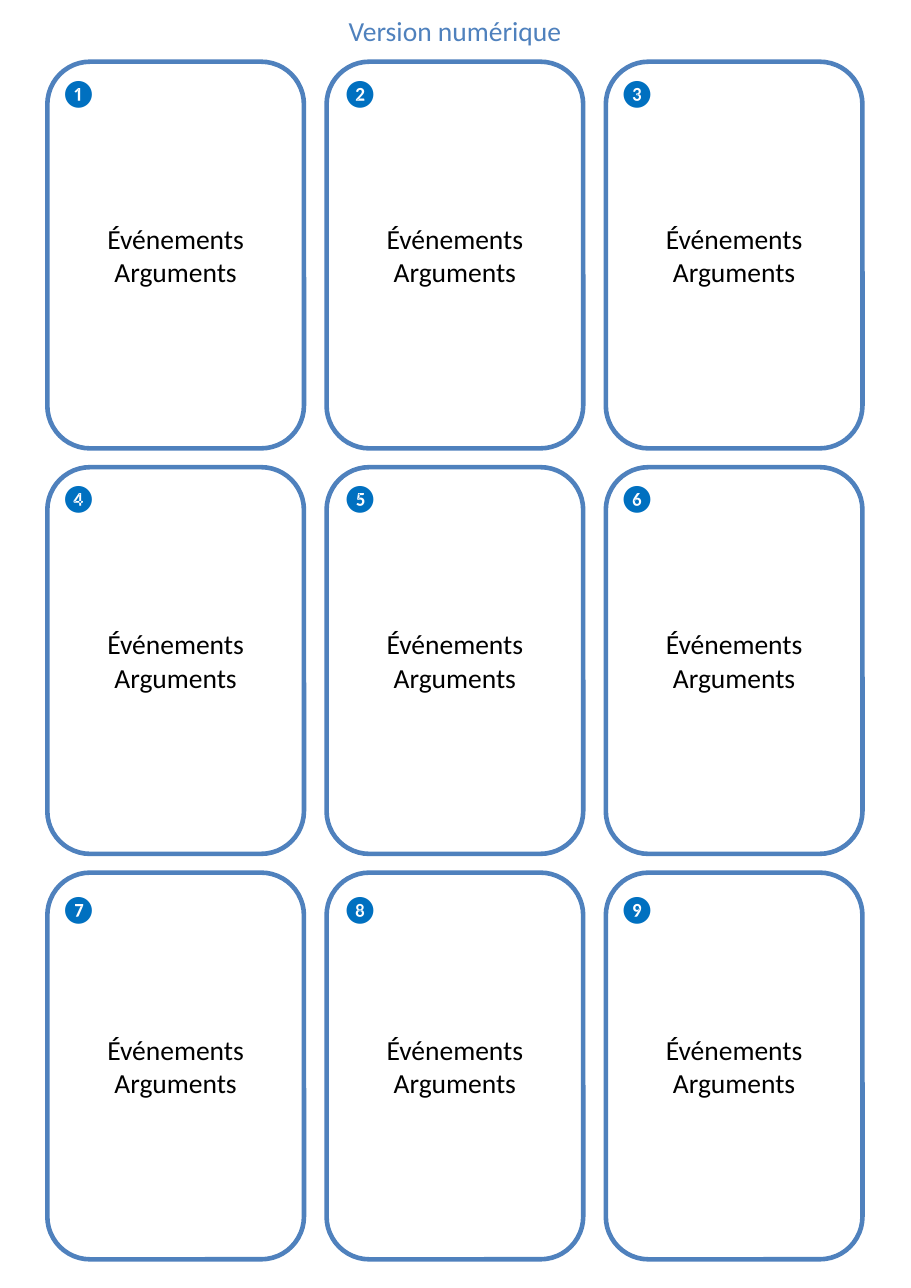
import pptx
import pptx.dml.color
import pptx.enum.shapes
import pptx.enum.text
import pptx.util

Inches = pptx.util.Inches
ALIGN = pptx.enum.text.PP_ALIGN
ANCHOR = pptx.enum.text.MSO_ANCHOR
AUTO_SIZE = pptx.enum.text.MSO_AUTO_SIZE

CARD_BLUE = "4F81BD"
NUMBER_BLUE = "0070C0"
NUMBERS = "❶❷❸❹❺❻❼❽❾"
COLUMNS = 3
CARD_WIDTH, CARD_HEIGHT = 2.33, 3.51
COLUMN_STEP, ROW_STEP = 2.535, 3.68
# Distance of the numbers from the card corner, by column and by row
NUMBER_INSETS_X = [0.02, 0.04, 0.02]
NUMBER_INSETS_Y = [0.08, 0.08, 0.13]


def color(hex_code):
    return pptx.dml.color.RGBColor.from_string(hex_code)


def write(frame, text, hex_code, align):
    frame.text = text
    for paragraph in frame.paragraphs:
        paragraph.alignment = align
        for run in paragraph.runs:
            run.font.name = "Calibri"
            run.font.size = pptx.util.Pt(18)
            run.font.color.rgb = color(hex_code)


def add_title(slide, left, top, width, height):
    title = slide.shapes.title
    title.left, title.top = Inches(left), Inches(top)
    title.width, title.height = Inches(width), Inches(height)
    frame = title.text_frame
    frame.vertical_anchor = ANCHOR.TOP
    frame.auto_size = AUTO_SIZE.NONE
    write(frame, "Version numérique", CARD_BLUE, ALIGN.CENTER)


def add_card(shapes, left, top):
    card = shapes.add_shape(
        pptx.enum.shapes.MSO_SHAPE.FLOWCHART_ALTERNATE_PROCESS,
        Inches(left), Inches(top), Inches(CARD_WIDTH), Inches(CARD_HEIGHT))
    card.shadow.inherit = False
    card.fill.solid()
    card.fill.fore_color.rgb = color("FFFFFF")
    card.line.color.rgb = color(CARD_BLUE)
    card.line.width = pptx.util.Pt(3)
    card.text_frame.vertical_anchor = ANCHOR.MIDDLE
    write(card.text_frame, "Événements\nArguments", "000000", ALIGN.CENTER)


def add_number(shapes, number, left, top):
    label = shapes.add_textbox(Inches(left), Inches(top), Inches(0.54), Inches(0.4))
    label.text_frame.word_wrap = False
    label.text_frame.auto_size = AUTO_SIZE.SHAPE_TO_FIT_TEXT
    write(label.text_frame, number, NUMBER_BLUE, ALIGN.LEFT)


def add_card_grid(slide, left, top):
    cards = slide.shapes.add_group_shape()
    for index, number in enumerate(NUMBERS):
        row, column = divmod(index, COLUMNS)
        card_left = left + column * COLUMN_STEP
        card_top = top + row * ROW_STEP
        add_card(cards.shapes, card_left, card_top)
        add_number(slide.shapes, number,
                   card_left + NUMBER_INSETS_X[column],
                   card_top + NUMBER_INSETS_Y[row])


def main():
    deck = pptx.Presentation()
    deck.slide_width, deck.slide_height = Inches(8.27), Inches(11.69)
    slide = deck.slides.add_slide(deck.slide_layouts.get_by_name("Title Only"))
    # Heading, then the numbered cards
    add_title(slide, 0.43, 0.08, 7.4, 0.4)
    add_card_grid(slide, 0.43, 0.56)
    deck.save("out.pptx")


if __name__ == "__main__":
    main()
